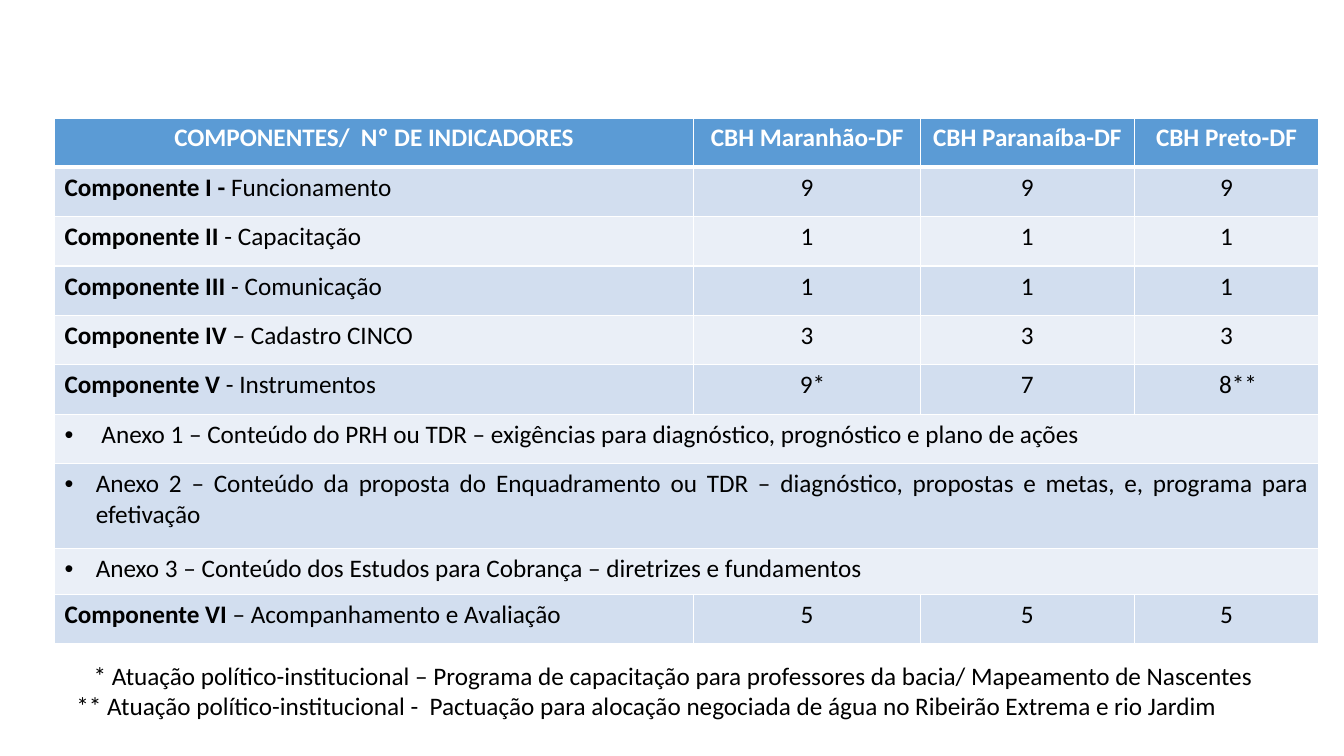
from dataclasses import dataclass

from lxml import etree
from pptx import Presentation
from pptx import util as u
from pptx.dml.color import RGBColor
from pptx.enum import text
from pptx.oxml import ns

FONT = "Calibri"
WHITE, BLACK = "FFFFFF", "000000"
HEADER_FILL = "5B9BD5"
BAND_FILLS = ("D2DEEF", "EAEFF7")
COLUMN_WIDTHS = (6.34, 2.25, 2.12, 1.83)
ROW_HEIGHT = 0.49
BULLET_INDENT = 0.31

CENTER = text.PP_ALIGN.CENTER
JUSTIFY = text.PP_ALIGN.JUSTIFY
LEFT = text.PP_ALIGN.LEFT


@dataclass
class Component:
    label: str
    name: str
    values: tuple[str, str, str]
    indents: tuple[float, float, float] = (0, 0, 0)
    height: float = ROW_HEIGHT


@dataclass
class Annex:
    title: str
    height: float = ROW_HEIGHT


HEADERS = ("COMPONENTES/  Nº DE INDICADORES", "CBH Maranhão-DF",
           "CBH Paranaíba-DF", "CBH Preto-DF")
ROWS = (
    Component("Componente I - ", "Funcionamento", ("9", "9", "9")),
    Component("Componente II ", "- Capacitação", ("1", "1", "1")),
    Component("Componente III ", "- Comunicação", ("1", "1", "1")),
    Component("Componente IV ", "– Cadastro CINCO", ("3", "3", "3")),
    Component("Componente V ", "- Instrumentos", ("9*", "7", "8**"), (0.11, 0, 0.23)),
    Annex(" Anexo 1 – Conteúdo do PRH ou TDR – exigências para diagnóstico, "
          "prognóstico e plano de ações"),
    Annex("Anexo 2 – Conteúdo da proposta do Enquadramento ou TDR – diagnóstico, "
          "propostas e metas, e, programa para efetivação", 0.84),
    Annex("Anexo 3 – Conteúdo dos Estudos para Cobrança – diretrizes e fundamentos", 0.46),
    Component("Componente VI ", "– Acompanhamento e Avaliação", ("5", "5", "5")),
)
FOOTNOTES = (
    ("* Atuação político-institucional – Programa de capacitação para professores "
     "da bacia/ Mapeamento de Nascentes", 0.17),
    ("** Atuação político-institucional -  Pactuação para alocação negociada de água "
     "no Ribeirão Extrema e rio Jardim", 0),
)


def rgb(color: str) -> RGBColor:
    return RGBColor.from_string(color)


def write(paragraph, content: str, *, color: str = BLACK, bold: bool = False,
          align=LEFT, indent: float = 0, bullet: bool = False) -> None:
    """Append one formatted run and set the layout of its paragraph."""
    run = paragraph.add_run()
    run.text = content
    run.font.name = FONT
    run.font.size = u.Pt(18)
    run.font.bold = bold
    run.font.color.rgb = rgb(color)
    paragraph.alignment = align
    properties = paragraph._p.get_or_add_pPr()
    properties.set("marL", str(u.Inches(indent)))
    if bullet:
        properties.set("indent", str(-u.Inches(indent)))
        etree.SubElement(properties, ns.qn("a:buFont"), typeface="Arial")
        etree.SubElement(properties, ns.qn("a:buChar"), char="•")


def style_cell(cell, fill: str, top: float = 1, bottom: float = 1) -> None:
    """Fill a cell and give it white borders, with widths in points."""
    properties = cell._tc.get_or_add_tcPr()
    for side, width in (("L", 1), ("R", 1), ("T", top), ("B", bottom)):
        line = etree.SubElement(properties, ns.qn(f"a:ln{side}"), w=str(u.Pt(width)))
        solid = etree.SubElement(line, ns.qn("a:solidFill"))
        etree.SubElement(solid, ns.qn("a:srgbClr"), val=WHITE)
    cell.fill.solid()
    cell.fill.fore_color.rgb = rgb(fill)


def fill_component(cells, component: Component) -> None:
    first = cells[0].text_frame.paragraphs[0]
    write(first, component.label, bold=True, align=JUSTIFY)
    write(first, component.name, align=JUSTIFY)
    for cell, value, indent in zip(cells[1:], component.values, component.indents):
        write(cell.text_frame.paragraphs[0], value, align=CENTER, indent=indent)


def fill_annex(cells, annex: Annex) -> None:
    cells[0].merge(cells[-1])
    write(cells[0].text_frame.paragraphs[0], annex.title, align=JUSTIFY,
          indent=BULLET_INDENT, bullet=True)


def add_indicator_table(slide) -> None:
    heights = [ROW_HEIGHT] + [row.height for row in ROWS]
    table = slide.shapes.add_table(
        len(heights), len(COLUMN_WIDTHS), u.Inches(0.54), u.Inches(1.17),
        u.Inches(sum(COLUMN_WIDTHS)), u.Inches(sum(heights))).table
    for column, width in zip(table.columns, COLUMN_WIDTHS):
        column.width = u.Inches(width)
    for table_row, height in zip(table.rows, heights):
        table_row.height = u.Inches(height)

    for cell, title in zip(table.rows[0].cells, HEADERS):
        style_cell(cell, HEADER_FILL, bottom=3)
        write(cell.text_frame.paragraphs[0], title, color=WHITE, bold=True, align=CENTER)

    for index, row in enumerate(ROWS):
        cells = list(table.rows[index + 1].cells)
        for cell in cells:
            style_cell(cell, BAND_FILLS[index % 2], top=3 if index == 0 else 1)
        if isinstance(row, Annex):
            fill_annex(cells, row)
        else:
            fill_component(cells, row)


def add_footnotes(slide) -> None:
    frame = slide.shapes.add_textbox(
        u.Inches(0.66), u.Inches(6.5), u.Inches(12.54), u.Inches(1.01)).text_frame
    frame.word_wrap = True
    for index, (note, indent) in enumerate(FOOTNOTES):
        paragraph = frame.add_paragraph() if index else frame.paragraphs[0]
        write(paragraph, note, indent=indent)


def main() -> None:
    presentation = Presentation()
    presentation.slide_width = u.Inches(13.33)
    presentation.slide_height = u.Inches(7.5)
    slide = presentation.slides.add_slide(presentation.slide_layouts[6])
    add_indicator_table(slide)
    add_footnotes(slide)
    presentation.save("out.pptx")


if __name__ == "__main__":
    main()
